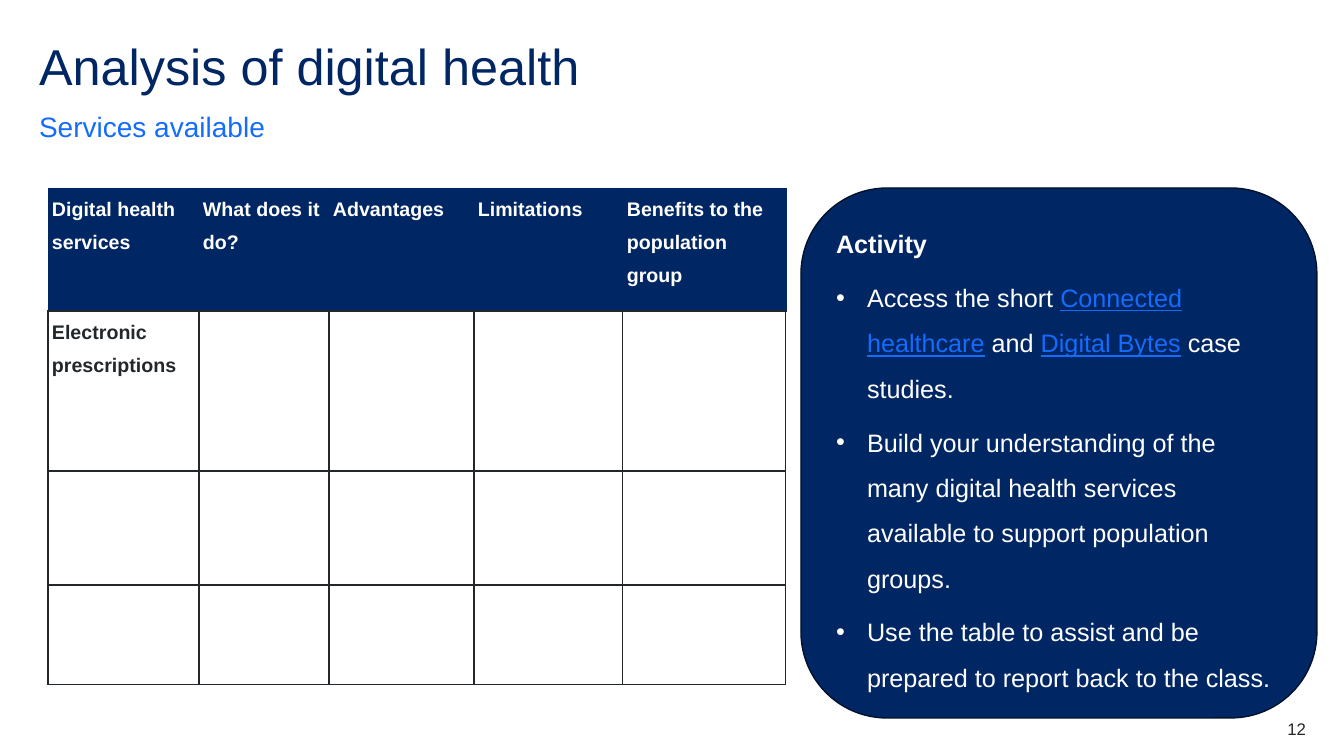
from lxml.etree import SubElement
from pptx import Presentation
from pptx.dml.color import RGBColor
from pptx.enum.shapes import MSO_SHAPE as Shape
from pptx.enum.text import MSO_ANCHOR as Anchor, PP_ALIGN as Align
from pptx.oxml import parse_xml
from pptx.oxml.ns import nsdecls, qn
from pptx.util import Pt

PX = 914400 / 100.8
COLOURS = {"navy": "002664", "blue": "146CFD", "ink": "22272B",
           "outline": "00112C", "white": "FFFFFF"}
HEADINGS = ["Digital health services", "What does it do?", "Advantages",
            "Limitations", "Benefits to the population group"]
SERVICES = ["Electronic prescriptions", "", ""]
COLUMN_WIDTHS = [151, 130, 145, 149, 163]
ROW_HEIGHTS = [123, 160, 114, 100]
TASKS = [
    [("Access the short ", False), ("Connected healthcare", True), (" and ", False),
     ("Digital Bytes", True), (" case studies.", False)],
    [("Build your understanding of the many digital health services available "
      "to support population groups.", False)],
    [("Use the table to assist and be prepared to report back to the class.", False)],
]
SPACED = {"line_spacing": 1.5, "space_after": Pt(6)}
CELL_SPACED = {**SPACED, "space_before": Pt(12)}


def px(*lengths):
    return [round(length * PX) for length in lengths]


def rgb(name):
    return RGBColor.from_string(COLOURS[name])


def apply(target, values):
    for name, value in values.items():
        setattr(target, name, value)


def add_words(paragraph, words, size, colour, **font):
    run = paragraph.add_run()
    run.text = words
    apply(run.font, {"name": "Arial", "size": Pt(size), **font})
    run.font.color.rgb = rgb(colour)


def set_frame(frame, anchor, inset=0):
    sides = ("margin_left", "margin_right", "margin_top", "margin_bottom")
    apply(frame, {"word_wrap": True, "vertical_anchor": anchor})
    if inset is not None:
        apply(frame, dict.fromkeys(sides, inset))


def add_line(slide, box, words, size, colour, anchor, **spacing):
    frame = slide.shapes.add_textbox(*px(*box)).text_frame
    set_frame(frame, anchor)
    apply(frame.paragraphs[0], spacing)
    add_words(frame.paragraphs[0], words, size, colour)


def add_heading(slide, left, top, width):
    title = slide.shapes.title
    apply(title, dict(zip(("left", "top", "width", "height"), px(left, top, width, 60))))
    set_frame(title.text_frame, Anchor.MIDDLE)
    paragraph = title.text_frame.paragraphs[0]
    apply(paragraph, {"alignment": Align.LEFT, "line_spacing": 0.9})
    add_words(paragraph, "Analysis of digital health", 36, "navy")
    add_line(slide, (left, top + 61, width, 43), "Services available", 20, "blue",
             Anchor.BOTTOM, line_spacing=1.5, space_after=Pt(12))


def set_borders(cell, edges):
    """Draw the cell's edges, given as side: (colour, points)."""
    properties = cell._tc.get_or_add_tcPr()
    for place, side in enumerate("LRTB"):
        colour, points = edges[side]
        properties.insert(place, parse_xml(
            f'<a:ln{side} {nsdecls("a")} w="{Pt(points)}"><a:solidFill>'
            f'<a:srgbClr val="{COLOURS[colour]}"/></a:solidFill></a:ln{side}>'))


def fill_cell(cell, words, is_header):
    apply(cell, dict(zip(("margin_left", "margin_right", "margin_top", "margin_bottom"),
                         px(4, 4, 0, 0))))
    edges = dict.fromkeys("LRTB", ("ink", 1))
    if is_header:
        cell.fill.solid()
        cell.fill.fore_color.rgb = rgb("navy")
        edges.update(dict.fromkeys("LRT", ("navy", 0.5)))
    else:
        cell.fill.background()
        if cell.is_merge_origin is False and words == "":
            edges["B"] = ("ink", 1)
    set_borders(cell, edges)
    if words:
        paragraph = cell.text_frame.paragraphs[0]
        apply(paragraph, CELL_SPACED)
        add_words(paragraph, words, 14, "white" if is_header else "ink", bold=True)


def add_services_table(slide, left, top):
    rows = [HEADINGS] + [[service] + [""] * (len(HEADINGS) - 1) for service in SERVICES]
    table = slide.shapes.add_table(
        len(rows), len(HEADINGS),
        *px(left, top, sum(COLUMN_WIDTHS), sum(ROW_HEIGHTS))).table
    table.horz_banding = False
    for column, width in zip(table.columns, px(*COLUMN_WIDTHS)):
        column.width = width
    for row, height in zip(table.rows, px(*ROW_HEIGHTS)):
        row.height = height
    for r, row in enumerate(rows):
        for c, words in enumerate(row):
            fill_cell(table.cell(r, c), words, r == 0)


def add_bullet(paragraph):
    properties = paragraph._p.get_or_add_pPr()
    indent = px(31)[0]
    properties.set("marL", str(indent))
    properties.set("indent", str(-indent))
    SubElement(properties, qn("a:buFont")).set("typeface", "Arial")
    SubElement(properties, qn("a:buChar")).set("char", "•")


def add_activity(slide, box):
    panel = slide.shapes.add_shape(Shape.ROUNDED_RECTANGLE, *px(*box))
    panel.shadow.inherit = False
    panel.fill.solid()
    panel.fill.fore_color.rgb = rgb("navy")
    panel.line.color.rgb = rgb("outline")
    panel.line.width = Pt(1)
    frame = panel.text_frame
    set_frame(frame, Anchor.MIDDLE, None)
    heading = frame.paragraphs[0]
    apply(heading, {**SPACED, "alignment": Align.LEFT})
    add_words(heading, "Activity", 18, "white", bold=True)
    for task in TASKS:
        paragraph = frame.add_paragraph()
        apply(paragraph, {**SPACED, "alignment": Align.LEFT})
        add_bullet(paragraph)
        for words, is_link in task:
            add_words(paragraph, words, 18, "blue" if is_link else "white",
                      underline=is_link)


def main():
    deck = Presentation()
    deck.slide_width, deck.slide_height = px(1344, 756)
    slide = deck.slides.add_slide(deck.slide_layouts[5])
    add_heading(slide, 39, 39, 1266)
    add_activity(slide, (801, 188, 516, 530))
    add_line(slide, (1227, 719, 79, 20), "12", 12, "ink", Anchor.TOP,
             alignment=Align.RIGHT)
    add_services_table(slide, 48, 188)
    deck.save("out.pptx")


if __name__ == "__main__":
    main()
